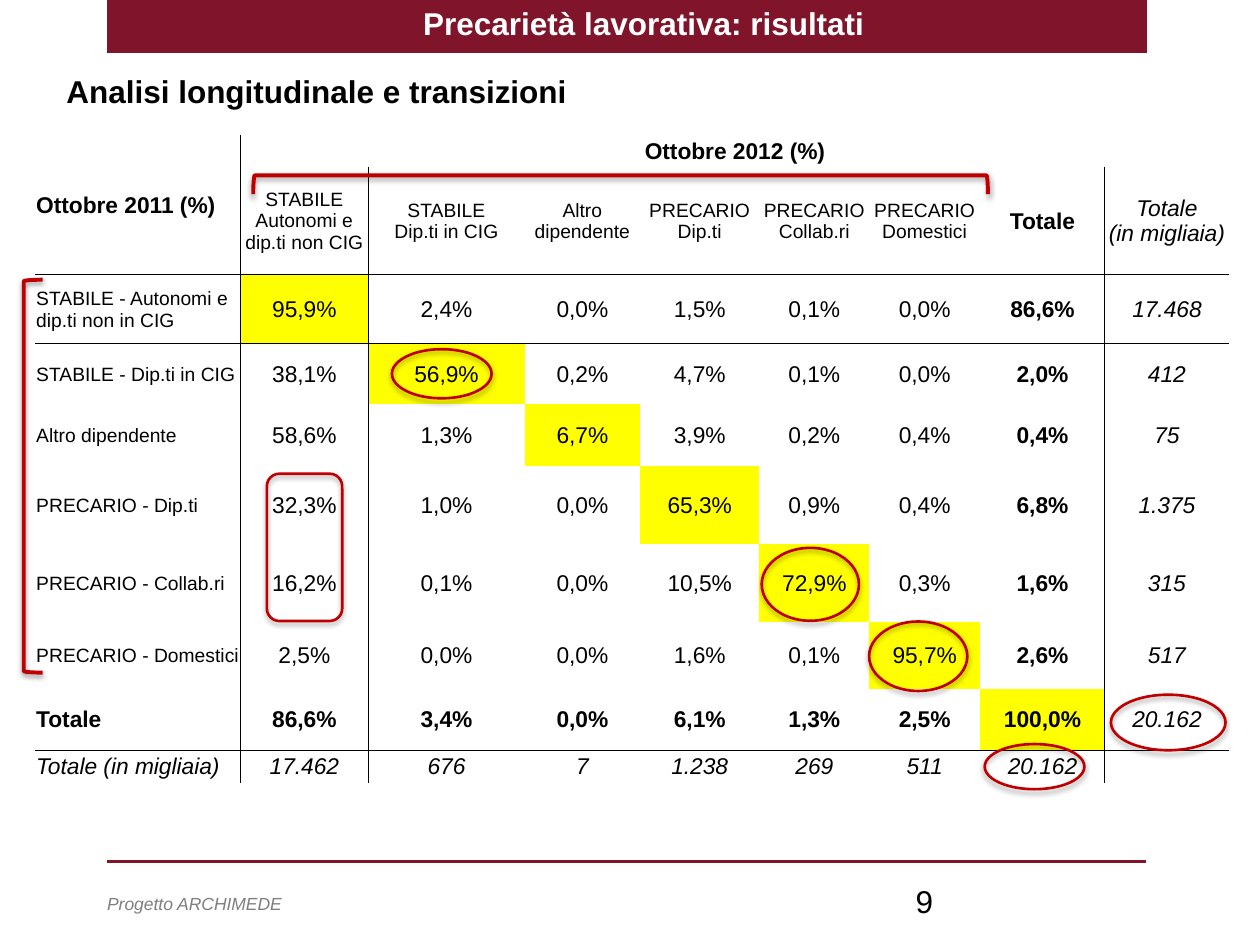
from copy import deepcopy

from lxml import etree
from pptx import Presentation
from pptx import util as u
from pptx.dml import color
from pptx.enum import shapes, text
from pptx.oxml import parse_xml
from pptx.oxml.ns import nsdecls, qn


def paint(target, code):
    """Set a solid colour on a fill or a font."""
    if hasattr(target, "solid"):
        target.solid()
        target.fore_color.rgb = color.RGBColor.from_string(code)
    else:
        target.color.rgb = color.RGBColor.from_string(code)


def write(para, words, code, formats):
    """Write formatted text; each new line becomes a line break."""
    for number, line in enumerate(words.split("\n")):
        if number:
            para.add_line_break()
        span = para.add_run()
        span.text = line
        for name, value in formats.items():
            setattr(span.font, name, value)
        paint(span.font, code)
    for line_break in para._p.findall(qn("a:br")):
        line_break.append(deepcopy(span.font._element))


BURGUNDY, RED, YELLOW, WHITE, BLACK = "7F142A", "C00000", "FFFF00", "FFFFFF", "000000"

deck = Presentation()
deck.slide_width, deck.slide_height = u.Cm(25.4), u.Cm(19.05)
page = deck.slides.add_slide(deck.slide_layouts[5])

# Title bar and footer rule
bar = page.shapes.add_shape(shapes.MSO_SHAPE.RECTANGLE, u.Cm(2.16), 0, u.Cm(20.96), u.Cm(1.07))
bar.shadow.inherit = False
paint(bar.fill, BURGUNDY)
bar.line.fill.background()
bar.element.addnext(page.shapes.title.element)

rule = page.shapes.add_connector(shapes.MSO_CONNECTOR.STRAIGHT,
                                 u.Cm(2.16), u.Cm(17.37), u.Cm(23.11), u.Cm(17.37))
paint(rule.line.fill, BURGUNDY)
rule.line.width = u.Pt(2)
etree.SubElement(rule.element.spPr, qn("a:effectLst"))

# Transition table
columns = [4.14, 2.57, 3.16, 2.32, 2.41, 2.21, 2.24, 2.51, 2.51]
heights = [0.64, 2.18, 1.39, 1.22, 1.25, 1.57, 1.57, 1.35, 1.23, 0.66]
rows = [
    ["Ottobre 2011 (%)", "Ottobre 2012 (%)"] + [""] * 7,
    ["", "STABILE\nAutonomi e dip.ti non CIG", "STABILE\nDip.ti in CIG", "Altro dipendente",
     "PRECARIO\nDip.ti", "PRECARIO\nCollab.ri", "PRECARIO\nDomestici", "Totale",
     "Totale\n(in migliaia)"],
    ["STABILE - Autonomi e dip.ti non in CIG",
     "95,9%", "2,4%", "0,0%", "1,5%", "0,1%", "0,0%", "86,6%", "17.468"],
    ["STABILE - Dip.ti in CIG",
     "38,1%", "56,9%", "0,2%", "4,7%", "0,1%", "0,0%", "2,0%", "412"],
    ["Altro dipendente",
     "58,6%", "1,3%", "6,7%", "3,9%", "0,2%", "0,4%", "0,4%", "75"],
    ["PRECARIO - Dip.ti",
     "32,3%", "1,0%", "0,0%", "65,3%", "0,9%", "0,4%", "6,8%", "1.375"],
    ["PRECARIO - Collab.ri",
     "16,2%", "0,1%", "0,0%", "10,5%", "72,9%", "0,3%", "1,6%", "315"],
    ["PRECARIO - Domestici",
     "2,5%", "0,0%", "0,0%", "1,6%", "0,1%", "95,7%", "2,6%", "517"],
    ["Totale",
     "86,6%", "3,4%", "0,0%", "6,1%", "1,3%", "2,5%", "100,0%", "20.162"],
    ["Totale (in migliaia)",
     "17.462", "676", "7", "1.238", "269", "511", "20.162", ""],
]
frame = page.shapes.add_table(len(rows), len(columns), u.Cm(0.71), u.Cm(2.72),
                              u.Cm(sum(columns)), u.Cm(sum(heights)))
table = frame.table
table.first_row = table.horz_banding = False
# Built-in style without fills and grid
table._tbl.tblPr.find(qn("a:tableStyleId")).text = "{2D5ABB26-0587-4C30-8999-92F81FD0307C}"
for column, width in zip(table.columns, columns):
    column.width = u.Cm(width)
for row, height in zip(table.rows, heights):
    row.height = u.Cm(height)
table.cell(0, 0).merge(table.cell(1, 0))
table.cell(0, 1).merge(table.cell(0, 8))

for r, words in enumerate(rows):
    for c, word in enumerate(words):
        cell = table.cell(r, c)
        cell.vertical_anchor = text.MSO_ANCHOR.MIDDLE
        cell.margin_left = cell.margin_right = cell.margin_top = u.Cm(0.02)
        cell.margin_bottom = 0

        # Rules beside the label and total columns, below the header and total rows
        borders = {
            "lnL": c == 1 or (c == 8 and r > 0),
            "lnR": c == 0 or (c == 7 and r > 0),
            "lnT": r in (2, 9),
            "lnB": r in (1, 8) or (r, c) == (0, 0),
        }
        for side, shown in borders.items():
            if shown:
                cell._tc.get_or_add_tcPr().append(parse_xml(
                    f'<a:{side} {nsdecls("a")} w="6350"><a:solidFill>'
                    f'<a:srgbClr val="{BLACK}"/></a:solidFill></a:{side}>'))
        diagonal = r == c + 1 and 2 <= r <= 8
        paint(cell.fill, YELLOW if diagonal else WHITE)

        para = cell.text_frame.paragraphs[0]
        if c:
            para.alignment = text.PP_ALIGN.CENTER
        if word:
            small = (r == 1 and c < 7) or (c == 0 and 2 <= r <= 7)
            italic = r == 9 or (c == 8 and r > 0)
            bold = not italic and (r in (0, 8) or c == 7)
            write(para, word, BLACK, {"name": "Arial", "size": u.Pt(11 if small else 13),
                                      "bold": bold, "italic": italic})
        else:
            etree.SubElement(para._p, qn("a:endParaRPr"), sz="1300")

# Title, subtitle, page number and project name
heading = {"size": u.Pt(18), "bold": True}
labels = [
    ("Precarietà lavorativa: risultati", (2.46, -0.05, 21.03, 1.12), WHITE, heading),
    ("Analisi longitudinale e transizioni", (1.09, 1.32, 22.48, 1.02), BLACK, heading),
    ("9", (18.21, 17.65, 5.92, 1.02), BLACK, {"size": u.Pt(18)}),
    ("Progetto ARCHIMEDE", (1.91, 17.88, 15.67, 0.69), "7F7F7F",
     {"size": u.Pt(10), "italic": True}),
]
for number, (words, place, code, formats) in enumerate(labels):
    place = [u.Cm(value) for value in place]
    box = page.shapes.title if number == 0 else page.shapes.add_textbox(*place)
    box.left, box.top, box.width, box.height = place
    body = box.text_frame
    body.word_wrap = True
    body.auto_size = text.MSO_AUTO_SIZE.NONE
    body.vertical_anchor = text.MSO_ANCHOR.TOP
    para = body.paragraphs[0]
    para.alignment = text.PP_ALIGN.LEFT if number else text.PP_ALIGN.CENTER
    write(para, words, code, {"name": "Arial", **formats})

# Red highlights and brackets: shape, place, rotation
kinds = shapes.MSO_SHAPE
marks = [
    (kinds.ROUNDED_RECTANGLE, (5.38, 9.55, 1.52, 2.97), 0),
    (kinds.OVAL, (17.81, 12.24, 1.4, 1.98), 90),
    (kinds.OVAL, (15.6, 10.8, 1.47, 1.96), 90),
    (kinds.OVAL, (8.41, 6.53, 0.99, 2.01), 90),
    (kinds.OVAL, (20.4, 14.45, 0.91, 2.01), 90),
    (kinds.OVAL, (22.99, 13.41, 1.12, 2.31), 90),
    (kinds.LEFT_BRACKET, (12.32, -3.68, 0.38, 14.81), 90),
    (kinds.LEFT_BRACKET, (0.48, 5.64, 0.38, 7.92), 0),
]
for kind, place, turn in marks:
    bracket = kind == kinds.LEFT_BRACKET
    mark = page.shapes.add_shape(kind, *[u.Cm(value) for value in place])
    mark.rotation = turn
    mark.fill.background()
    paint(mark.line.fill, RED)
    mark.line.width = u.Pt(2.25 if bracket else 1.5)
    distance, opacity = (1.6, 38) if bracket else (1.8, 35)
    mark.element.spPr.append(parse_xml(
        f'<a:effectLst {nsdecls("a")}><a:outerShdw blurRad="{u.Pt(3.1)}" '
        f'dist="{u.Pt(distance)}" dir="5400000" rotWithShape="0"><a:srgbClr val="{BLACK}">'
        f'<a:alpha val="{opacity * 1000}"/></a:srgbClr></a:outerShdw></a:effectLst>'))

deck.save("out.pptx")
